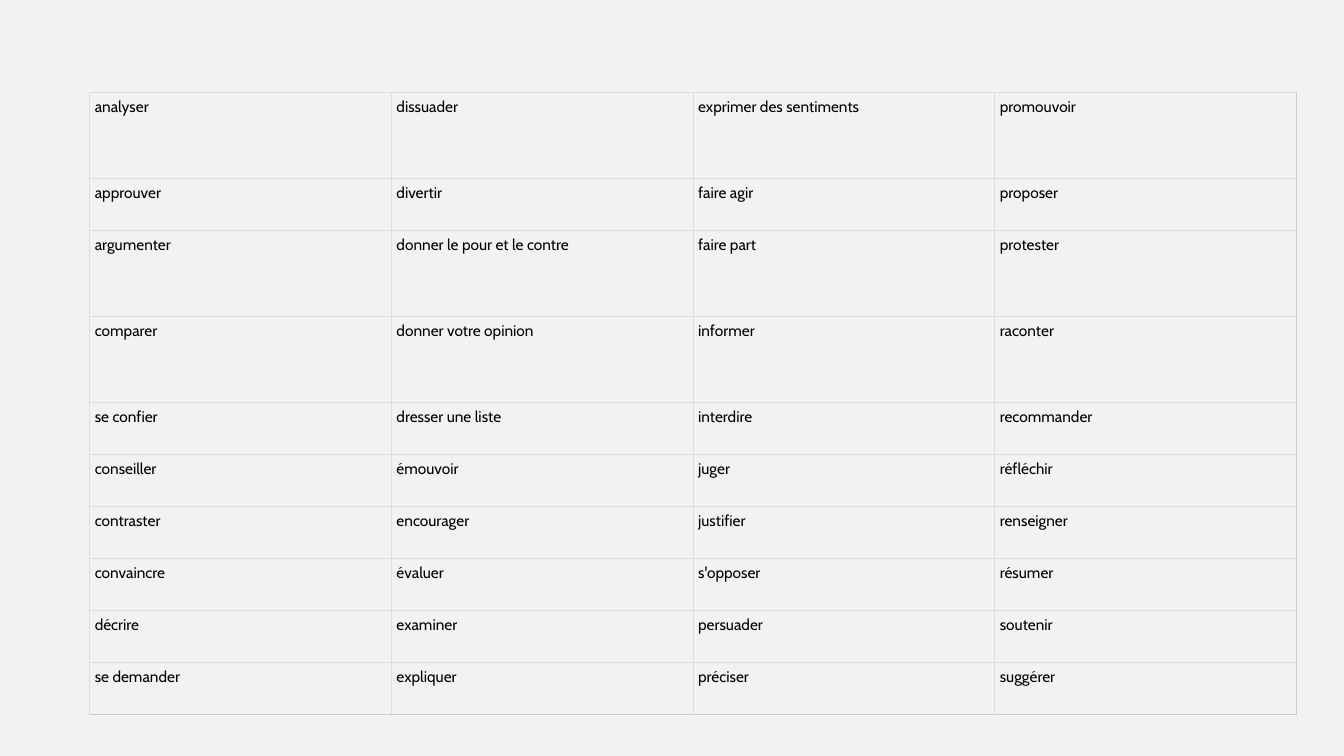
from lxml.etree import SubElement
from pptx import Presentation
from pptx.dml.color import RGBColor
from pptx.oxml.ns import qn
from pptx.util import Inches, Pt

COLOURS = {
    "background": "F2F2F2",
    "text": "000000",
    "inner border": "DDDDDD",
    "outer border": "CCCCCC",
}
FONT = "Cabin"
CELL_MARGIN = Inches(0.05)
BORDER_WIDTH = Pt(0.75)
TALL, SHORT = 1.65, 1
ROW_WEIGHTS = [TALL, SHORT, TALL, TALL] + [SHORT] * 6

VERBS = [
    ["analyser", "dissuader", "exprimer des sentiments", "promouvoir"],
    ["approuver", "divertir", "faire agir", "proposer"],
    ["argumenter", "donner le pour et le contre", "faire part", "protester"],
    ["comparer", "donner votre opinion", "informer", "raconter"],
    ["se confier", "dresser une liste", "interdire", "recommander"],
    ["conseiller", "émouvoir", "juger", "réfléchir"],
    ["contraster", "encourager", "justifier", "renseigner"],
    ["convaincre", "évaluer", "s'opposer", "résumer"],
    ["décrire", "examiner", "persuader", "soutenir"],
    ["se demander", "expliquer", "préciser", "suggérer"],
]


def set_borders(cell, is_last_column, is_last_row):
    """Draw the four cell edges, darker on the table's right and bottom."""
    outer_edges = {"a:lnR": is_last_column, "a:lnB": is_last_row}
    properties = cell._tc.get_or_add_tcPr()
    for edge in ("a:lnL", "a:lnR", "a:lnT", "a:lnB"):
        line = SubElement(properties, qn(edge), w=str(BORDER_WIDTH))
        colour = "outer border" if outer_edges.get(edge) else "inner border"
        fill = SubElement(line, qn("a:solidFill"))
        SubElement(fill, qn("a:srgbClr"), val=COLOURS[colour])


def fill_cell(cell, verb):
    cell.text = verb
    cell.fill.background()
    cell.margin_left = cell.margin_right = CELL_MARGIN
    cell.margin_top = cell.margin_bottom = CELL_MARGIN
    font = cell.text_frame.paragraphs[0].font
    font.name = FONT
    font.size = Pt(11)
    font.bold = False
    font.color.rgb = RGBColor.from_string(COLOURS["text"])


def add_verb_table(slide, left, top, width, height):
    row_count, column_count = len(VERBS), len(VERBS[0])
    table = slide.shapes.add_table(
        row_count, column_count, left, top, width, height
    ).table
    table.first_row = False
    table.horz_banding = False
    for column in table.columns:
        column.width = int(width / column_count)
    for row, weight in zip(table.rows, ROW_WEIGHTS):
        row.height = int(height * weight / sum(ROW_WEIGHTS))

    for row_index, verbs in enumerate(VERBS):
        for column_index, verb in enumerate(verbs):
            cell = table.cell(row_index, column_index)
            set_borders(
                cell, column_index == column_count - 1, row_index == row_count - 1
            )
            fill_cell(cell, verb)


def main():
    presentation = Presentation()
    presentation.slide_width = Inches(13.33)
    presentation.slide_height = Inches(7.5)
    slide = presentation.slides.add_slide(presentation.slide_layouts[6])
    background = slide.background.fill
    background.solid()
    background.fore_color.rgb = RGBColor.from_string(COLOURS["background"])
    add_verb_table(slide, Inches(0.89), Inches(0.92), Inches(11.97), Inches(6.17))
    presentation.save("out.pptx")


if __name__ == "__main__":
    main()
